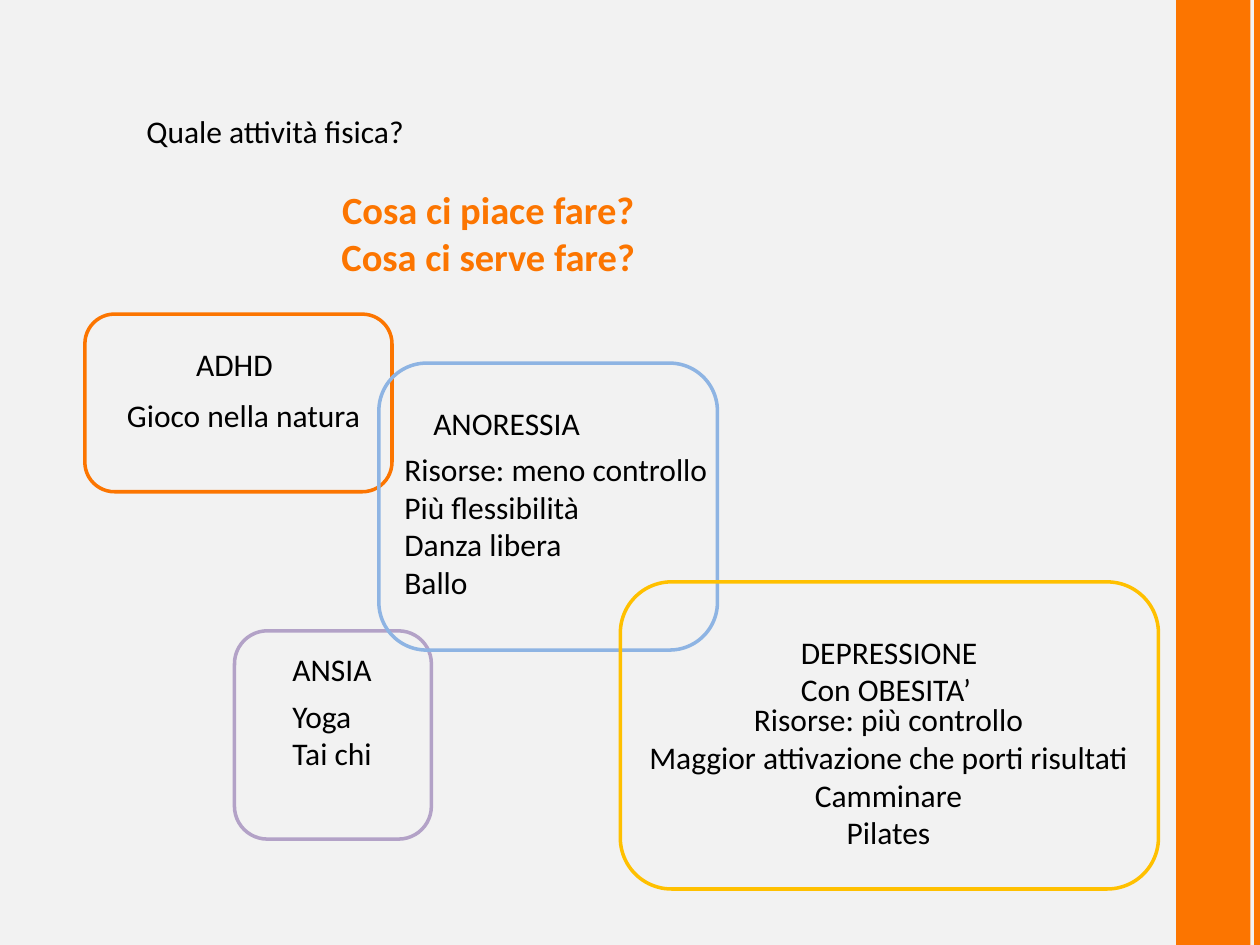
from dataclasses import dataclass

from lxml.etree import SubElement
from pptx import Presentation
from pptx.dml.color import RGBColor as Rgb
from pptx.enum.shapes import MSO_CONNECTOR as Conn, MSO_SHAPE as Form
from pptx.enum.text import MSO_ANCHOR as Anchor, MSO_AUTO_SIZE as Auto, PP_ALIGN as Align
from pptx.oxml.ns import qn
from pptx.util import Pt


@dataclass(frozen=True)
class Theme:
    font: str = "Calibri"
    size: int = 18
    large: int = 22
    back: str = "F2F2F2"
    ink: str = "000000"
    orange: str = "FC7500"
    blue: str = "8EB4E3"
    gold: str = "FFC000"
    violet: str = "B3A2C7"


@dataclass(frozen=True)
class Area:
    left: float
    top: float
    width: float
    height: float

    def place(self) -> tuple:
        return Pt(self.left), Pt(self.top), Pt(self.width), Pt(self.height)


@dataclass(frozen=True)
class Note:
    area: Area
    text: str
    align: Align = Align.LEFT


@dataclass(frozen=True)
class Group:
    """A rounded frame with its heading and its advice."""
    frame: Area
    color: str
    head: Note
    advice: Note


THEME = Theme()

GROUPS = [
    Group(Area(134, 360.5, 112.5, 119), THEME.violet,
          Note(Area(160, 368, 60, 29), "ANSIA"),
          Note(Area(160, 394.5, 60.5, 51), "Yoga\nTai chi")),
    Group(Area(48.5, 179.5, 175.5, 101.5), THEME.orange,
          Note(Area(105, 193.5, 59, 29), "ADHD"),
          Note(Area(65.5, 222.5, 150, 29), "Gioco nella natura")),
    Group(Area(216.5, 207.5, 193.5, 164), THEME.blue,
          Note(Area(240.5, 227.5, 98.5, 29), "ANORESSIA"),
          Note(Area(224, 253.5, 193.5, 94.5),
               "Risorse: meno controllo\nPiù flessibilità\nDanza libera\nBallo")),
    Group(Area(354.5, 332.5, 307.5, 175.5), THEME.gold,
          Note(Area(450.5, 358, 120.5, 51), "DEPRESSIONE\nCon OBESITA’"),
          Note(Area(357, 396.5, 301.5, 94.5),
               "Risorse: più controllo\nMaggior attivazione che porti risultati\n"
               "Camminare\nPilates", Align.CENTER)),
]


def write(shape, note: Note, size: int = THEME.size, color: str = THEME.ink,
          bold: bool = False, wrap: bool = False) -> None:
    shape.left, shape.top, shape.width, shape.height = note.area.place()
    frame = shape.text_frame
    frame.text = note.text
    frame.word_wrap = wrap
    frame.auto_size = Auto.NONE if wrap else Auto.SHAPE_TO_FIT_TEXT
    frame.vertical_anchor = Anchor.TOP
    for para in frame.paragraphs:
        para.alignment = note.align
        para.line_spacing = 1.0
        para.space_before = Pt(0)
        for run in para.runs:
            font = run.font
            font.name, font.size, font.bold = THEME.font, Pt(size), bold
            font.color.rgb = Rgb.from_string(color)


def add_note(slide, note: Note, **style) -> None:
    write(slide.shapes.add_textbox(*note.area.place()), note, **style)


def add_frame(slide, group: Group) -> None:
    box = slide.shapes.add_shape(Form.ROUNDED_RECTANGLE, *group.frame.place())
    box.shadow.inherit = False
    box.fill.background()
    box.line.color.rgb = Rgb.from_string(group.color)
    box.line.width = Pt(2)


def add_side(slide) -> None:
    orange = Rgb.from_string(THEME.orange)
    band = slide.shapes.add_shape(Form.RECTANGLE, *Area(672, 0, 42.5, 540).place())
    band.shadow.inherit = False
    band.fill.solid()
    band.fill.fore_color.rgb = orange
    band.line.fill.background()
    edge = slide.shapes.add_connector(Conn.STRAIGHT, Pt(718.5), Pt(0), Pt(718.5), Pt(540))
    edge.line.color.rgb = orange
    edge.line.width = Pt(4)
    SubElement(edge._element.spPr, qn("a:effectLst"))


def main() -> None:
    deck = Presentation()
    deck.slide_width, deck.slide_height = Pt(720), Pt(540)
    slide = deck.slides.add_slide(deck.slide_layouts[5])
    slide.background.fill.solid()
    slide.background.fill.fore_color.rgb = Rgb.from_string(THEME.back)

    # Side band
    add_side(slide)

    # Title and key questions
    write(slide.shapes.title, Note(Area(76.5, 60.5, 164, 29), "Quale attività fisica?"))
    add_note(slide, Note(Area(129, 103, 300, 96),
                         "Cosa ci piace fare?\nCosa ci serve fare?", Align.CENTER),
             size=THEME.large, color=THEME.orange, bold=True, wrap=True)

    # Texts first, frames on top
    for group in GROUPS:
        add_note(slide, group.head)
        add_note(slide, group.advice)
    for group in GROUPS:
        add_frame(slide, group)

    deck.save("out.pptx")


if __name__ == "__main__":
    main()
